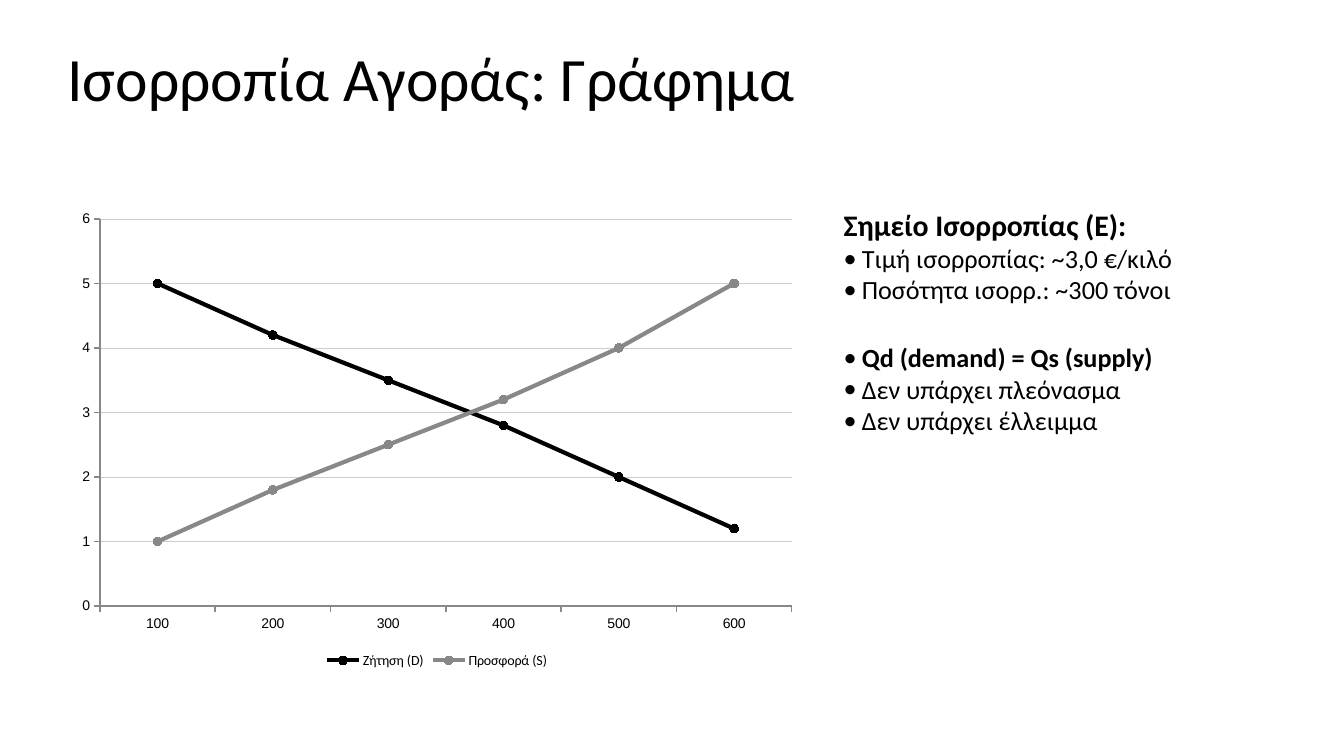
from lxml import etree
from pptx import Presentation
from pptx.chart.data import CategoryChartData
from pptx.dml.color import RGBColor
from pptx.enum import chart as ch
from pptx.oxml import ns
from pptx.util import Inches, Pt

# Content
TITLE = "Ισορροπία Αγοράς: Γράφημα"
QUANTITIES = ["100", "200", "300", "400", "500", "600"]
BLACK = RGBColor(0, 0, 0)
GRAY = RGBColor(0x88, 0x88, 0x88)
LIGHT = RGBColor(0xCC, 0xCC, 0xCC)
CURVES = [
    ("Ζήτηση (D)", [5, 4.2, 3.5, 2.8, 2, 1.2], BLACK),
    ("Προσφορά (S)", [1, 1.8, 2.5, 3.2, 4, 5], GRAY),
]
HEADING = "Σημείο Ισορροπίας (E):"
# Text, bold, space before in points
POINTS = [
    ("Τιμή ισορροπίας: ~3,0 €/κιλό", False, 0),
    ("Ποσότητα ισορρ.: ~300 τόνοι", False, 0),
    ("Qd (demand) = Qs (supply)", True, 26),
    ("Δεν υπάρχει πλεόνασμα", False, 0),
    ("Δεν υπάρχει έλλειμμα", False, 0),
]
FONT = "Calibri"
BODY_TOP, BODY_HEIGHT = 2, 4.67
BULLET_INDENT = Inches(0.18)


def set_font(font, size, name=FONT, bold=False):
    font.size, font.name, font.bold = Pt(size), name, bold
    font.color.rgb = BLACK


def set_line(line, color, width):
    line.color.rgb = color
    line.width = Pt(width)


def add_box(left, top, width, height):
    tf = s.shapes.add_textbox(*map(Inches, (left, top, width, height))).text_frame
    tf.word_wrap = True
    return tf


def write(p, content, size, bold=False, bullet=False, before=0):
    if bullet:
        pPr = p._p.get_or_add_pPr()
        pPr.set("marL", str(BULLET_INDENT))
        pPr.set("indent", str(-BULLET_INDENT))
        etree.SubElement(pPr, ns.qn("a:buFont"), typeface=FONT)
        etree.SubElement(pPr, ns.qn("a:buChar"), char="•")
    if before:
        p.space_before = Pt(before)
    r = p.add_run()
    r.text = content
    set_font(r.font, size, bold=bold)


prs = Presentation()
prs.slide_width, prs.slide_height = Inches(13.33), Inches(7.5)
s = prs.slides.add_slide(prs.slide_layouts[6])

# Title
tf = add_box(0.67, 0.4, 12, 1.6)
tf.margin_left = tf.margin_right = tf.margin_top = tf.margin_bottom = 0
write(tf.paragraphs[0], TITLE, 44)

# Supply and demand chart
data = CategoryChartData()
data.categories = QUANTITIES
for name, prices, _ in CURVES:
    data.add_series(name, prices)
chart = s.shapes.add_chart(
    ch.XL_CHART_TYPE.LINE_MARKERS, Inches(0.67), Inches(BODY_TOP),
    Inches(7.33), Inches(BODY_HEIGHT), data).chart
set_font(chart.font, 10)
chart.has_title = False
chart.has_legend = True
chart.legend.position = ch.XL_LEGEND_POSITION.BOTTOM
chart.legend.include_in_layout = False
chart.plots[0].vary_by_categories = False

for series, (_, _, color) in zip(chart.plots[0].series, CURVES):
    series.smooth = False
    set_line(series.format.line, color, 3)
    marker = series.marker
    marker.style, marker.size = ch.XL_MARKER_STYLE.CIRCLE, 6
    marker.format.fill.solid()
    marker.format.fill.fore_color.rgb = color
    marker.format.line.color.rgb = color

for axis in (chart.category_axis, chart.value_axis):
    set_font(axis.tick_labels.font, 10, name="Arial")
    set_line(axis.format.line, GRAY, 1)
    axis.major_tick_mark = ch.XL_TICK_MARK.OUTSIDE
    axis.minor_tick_mark = ch.XL_TICK_MARK.NONE
value_axis = chart.value_axis
value_axis.minimum_scale, value_axis.maximum_scale = 0, 6
value_axis.major_unit = 1
set_line(value_axis.major_gridlines.format.line, LIGHT, 0.5)

# Equilibrium notes
tf = add_box(8.27, BODY_TOP, 4.67, BODY_HEIGHT)
write(tf.paragraphs[0], HEADING, 21.3, bold=True)
for content, bold, before in POINTS:
    write(tf.add_paragraph(), content, 18.7, bold=bold, bullet=True, before=before)

prs.save("out.pptx")
